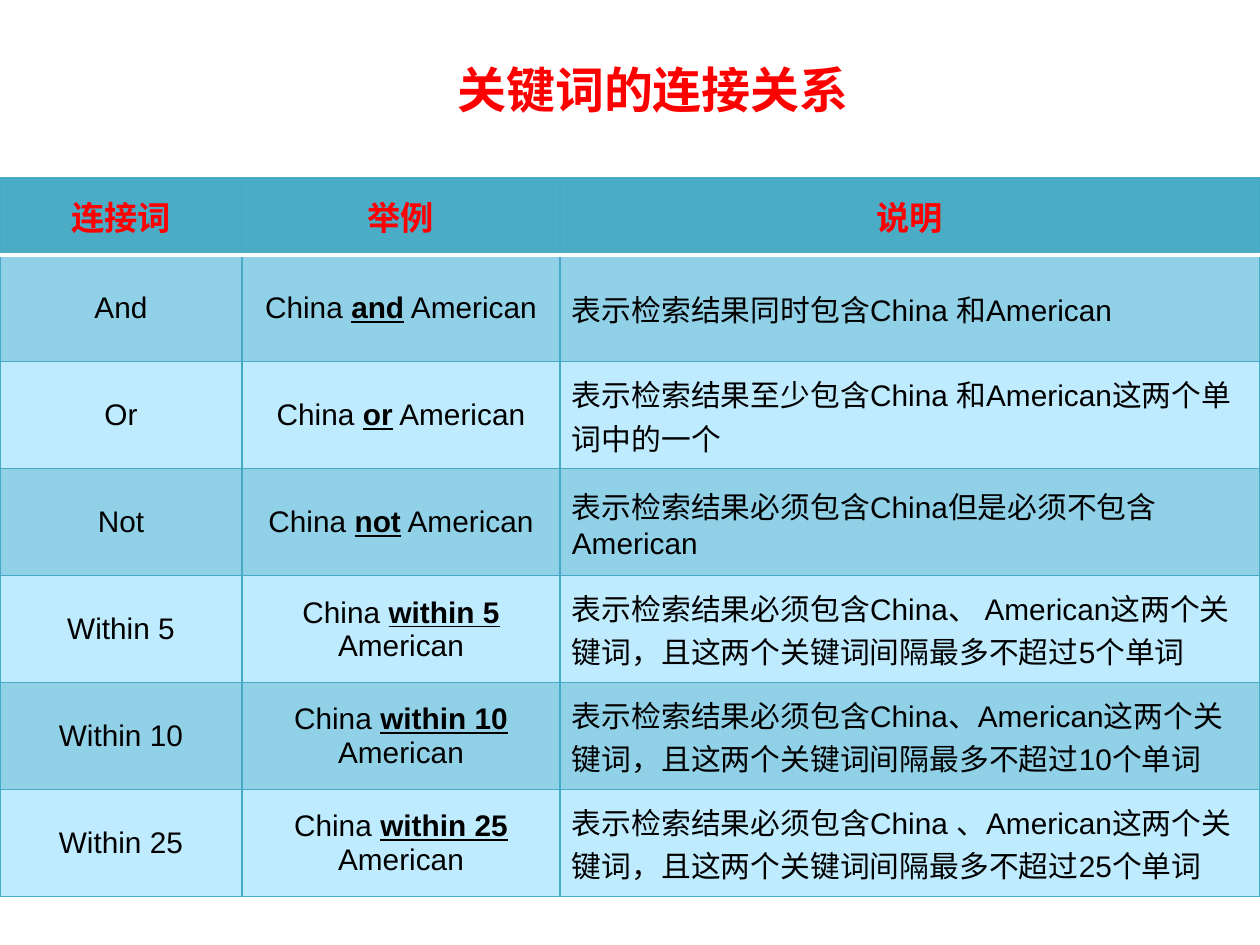
import dataclasses

import lxml.etree
import pptx
import pptx.dml.color
import pptx.enum.text
import pptx.oxml.ns
import pptx.util

EMU_PER_PX = 914400 / 126
HAN_FONT = "Noto Sans CJK SC"
SERIF = "Times New Roman"
SANS = "Arial"
RED = "FF0000"
BLACK = "000000"
WHITE = "FFFFFF"
BORDER = "46AAC5"
HEADER_FILL = "4BACC6"
ROW_FILLS = ("91D1E8", "BFEBFF")
COLUMN_WIDTHS = (242, 318, 700)
HEADER_HEIGHT = 77
ROW_HEIGHT = 107
TABLE_TOP = 178
CENTER = pptx.enum.text.PP_ALIGN.CENTER
LEFT = pptx.enum.text.PP_ALIGN.LEFT
MIDDLE = pptx.enum.text.MSO_ANCHOR.MIDDLE


@dataclasses.dataclass
class Segment:
    text: str
    font: str = SANS
    bold: bool = False
    underline: bool = False


@dataclasses.dataclass
class Connector:
    word: str
    explanation: list[Segment]

    def example(self) -> list[Segment]:
        return [
            Segment("China "),
            Segment(self.word.lower(), bold=True, underline=True),
            Segment(" American"),
        ]


def px(length: int) -> int:
    return round(length * EMU_PER_PX)


def color(value: str) -> pptx.dml.color.RGBColor:
    return pptx.dml.color.RGBColor.from_string(value)


def han(text: str) -> Segment:
    return Segment(text, SERIF)


def within(count: int, names: str) -> Connector:
    return Connector(f"Within {count}", [
        han("表示检索结果必须包含"),
        Segment(names),
        han("这两个关键词，且这两个关键词间隔最多不超过"),
        Segment(str(count)),
        han("个单词"),
    ])


CONNECTORS = [
    Connector("And", [
        han("表示检索结果同时包含"), Segment("China "), han("和"), Segment("American"),
    ]),
    Connector("Or", [
        han("表示检索结果至少包含"), Segment("China "), han("和"), Segment("American"),
        han("这两个单词中的一个"),
    ]),
    Connector("Not", [
        han("表示检索结果必须包含"), Segment("China"), han("但是必须不包含"), Segment("American"),
    ]),
    Connector("Within 5", [
        Segment("表示"),
        han("检索结果"),
        Segment("必须包含China、 American这两个关键词，且这两个关键词间隔最多不超过5个单词"),
    ]),
    within(10, "China、American"),
    within(25, "China 、American"),
]


def format_run(run, segment: Segment, size: int, text_color: str) -> None:
    run.font.size = pptx.util.Pt(size)
    run.font.bold = segment.bold
    run.font.underline = segment.underline
    run.font.color.rgb = color(text_color)
    run.font.name = segment.font
    east_asian = lxml.etree.SubElement(run._r.get_or_add_rPr(), pptx.oxml.ns.qn("a:ea"))
    east_asian.set("typeface", HAN_FONT)


def write(paragraph, segments: list[Segment], size: int, text_color: str, alignment) -> None:
    paragraph.alignment = alignment
    for segment in segments:
        run = paragraph.add_run()
        run.text = segment.text
        format_run(run, segment, size, text_color)


def add_border(cell, side: str, line_color: str, points: float) -> None:
    properties = cell._tc.get_or_add_tcPr()
    line = lxml.etree.SubElement(properties, pptx.oxml.ns.qn(f"a:ln{side}"))
    line.set("w", str(pptx.util.Pt(points)))
    fill = lxml.etree.SubElement(line, pptx.oxml.ns.qn("a:solidFill"))
    lxml.etree.SubElement(fill, pptx.oxml.ns.qn("a:srgbClr")).set("val", line_color)


def style_cell(cell, fill_color: str, white_side: str = "") -> None:
    cell.vertical_anchor = MIDDLE
    cell.margin_left = cell.margin_right = px(12)
    cell.margin_top = cell.margin_bottom = px(7)
    for side in "LRTB":
        if side == white_side:
            add_border(cell, side, WHITE, 2)
        else:
            add_border(cell, side, BORDER, 0.75)
    cell.fill.solid()
    cell.fill.fore_color.rgb = color(fill_color)


def add_title(slide, text: str) -> None:
    title = slide.shapes.title
    title.left, title.top, title.width, title.height = px(431), px(53), px(444), px(72)
    frame = title.text_frame
    frame.text = text
    frame.word_wrap = False
    frame.auto_size = pptx.enum.text.MSO_AUTO_SIZE.NONE
    frame.vertical_anchor = MIDDLE
    paragraph = frame.paragraphs[0]
    paragraph.alignment = CENTER
    format_run(paragraph.runs[0], Segment(text, HAN_FONT, bold=True), 28, RED)


def add_connector_table(slide, headings: list[str], connectors: list[Connector]) -> None:
    height = HEADER_HEIGHT + ROW_HEIGHT * len(connectors)
    table = slide.shapes.add_table(
        len(connectors) + 1, len(headings),
        0, px(TABLE_TOP), px(sum(COLUMN_WIDTHS)), px(height),
    ).table
    for column, width in zip(table.columns, COLUMN_WIDTHS):
        column.width = px(width)
    for index, row in enumerate(table.rows):
        row.height = px(ROW_HEIGHT if index else HEADER_HEIGHT)
    for index, heading in enumerate(headings):
        cell = table.cell(0, index)
        style_cell(cell, HEADER_FILL, "B")
        write(cell.text_frame.paragraphs[0], [Segment(heading, SERIF, True)], 19, RED, CENTER)
    for row_index, connector in enumerate(connectors, 1):
        contents = ([Segment(connector.word)], connector.example(), connector.explanation)
        for index, segments in enumerate(contents):
            cell = table.cell(row_index, index)
            style_cell(cell, ROW_FILLS[(row_index - 1) % 2], "T" if row_index == 1 else "")
            alignment = LEFT if index == 2 else CENTER
            write(cell.text_frame.paragraphs[0], segments, 17, BLACK, alignment)


def main() -> None:
    presentation = pptx.Presentation()
    presentation.slide_width = px(1260)
    presentation.slide_height = px(945)
    slide = presentation.slides.add_slide(presentation.slide_layouts[5])
    add_title(slide, "关键词的连接关系")
    add_connector_table(slide, ["连接词", "举例", "说明"], CONNECTORS)
    presentation.save("out.pptx")


if __name__ == "__main__":
    main()
